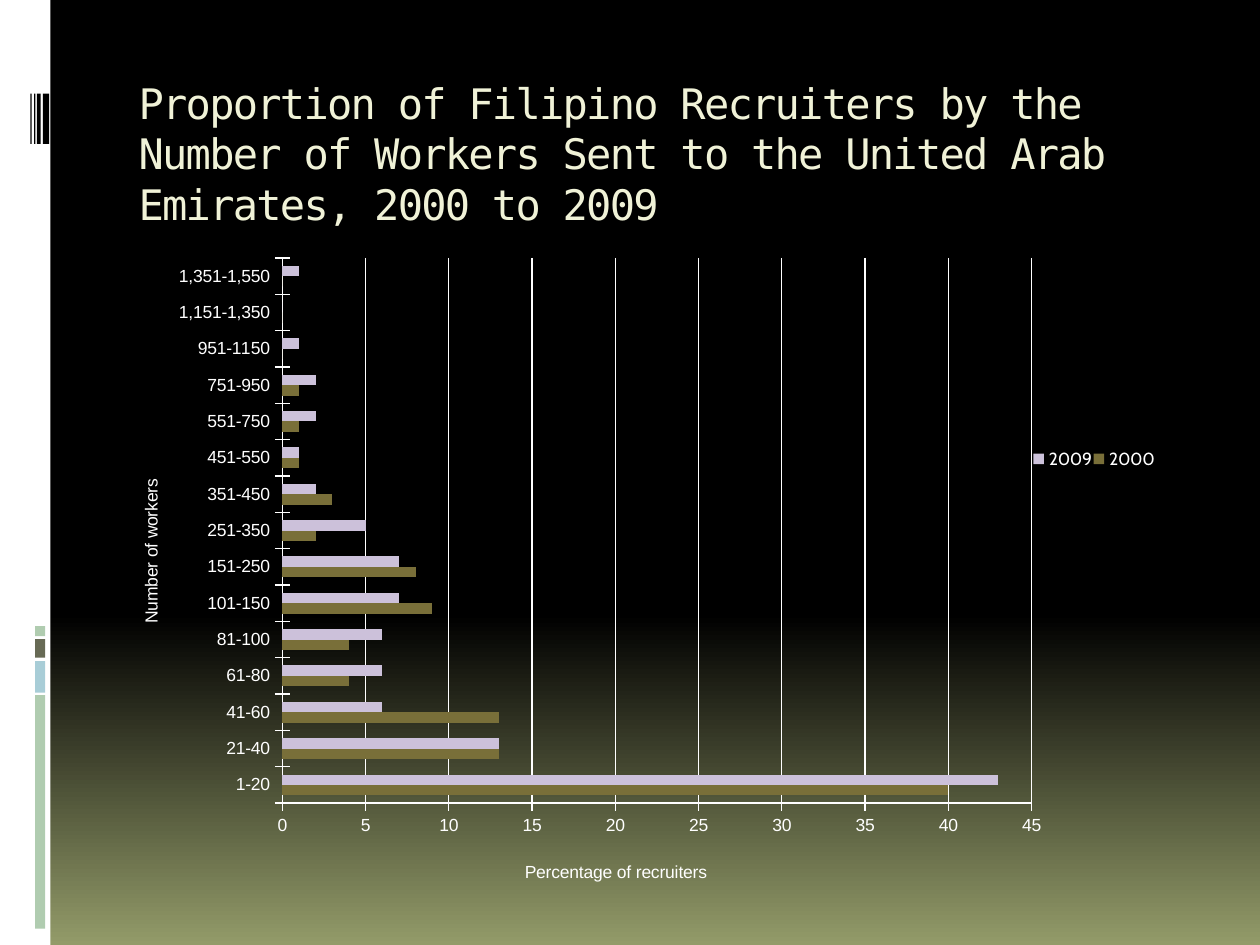
"""Build a slide with a bar chart of Filipino recruiters by number of workers sent."""
from copy import deepcopy

from lxml.etree import SubElement
from pptx import Presentation
from pptx.chart.data import CategoryChartData
from pptx.dml.color import RGBColor
from pptx.enum.chart import XL_CHART_TYPE, XL_LEGEND_POSITION, XL_TICK_MARK
from pptx.enum.shapes import MSO_SHAPE
from pptx.enum.text import MSO_ANCHOR, MSO_AUTO_SIZE, PP_ALIGN
from pptx.oxml.ns import qn
from pptx.util import Pt


def color(target, value):
    target.rgb = RGBColor.from_string(value)


def set_layout(element, position, **settings):
    for old_layout in element.findall(qn("c:layout")):
        element.remove(old_layout)
    layout = element.makeelement(qn("c:layout"))
    manual = SubElement(layout, qn("c:manualLayout"))
    for name, value in settings.items():
        SubElement(manual, qn(f"c:{name}")).set("val", str(value))
    element.insert(position, layout)


presentation = Presentation()
presentation.slide_width, presentation.slide_height = Pt(720), Pt(540)
slide = presentation.slides.add_slide(presentation.slide_layouts[5])

background = slide.background.fill
background.gradient()
background.gradient_angle = 270
first_stop, last_stop = background.gradient_stops
color(first_stop.color, "000000")
color(last_stop.color, "939B69")
first_stop.position, last_stop.position = 0, 1
stop_list = slide.element.find(".//" + qn("a:gsLst"))
middle_stop = deepcopy(stop_list[0])
middle_stop.set("pos", "65000")
stop_list.insert(1, middle_stop)

side_bars = [
    (0, 0, 28.8, 540, "FFFFFF"),
    (20, 397.3, 5.8, 133.4, "B0CCB0"),
    (20, 377.8, 5.8, 18, "A8CDD7"),
    (20, 365.3, 5.8, 10.6, "676A55"),
    (20, 357.8, 5.8, 5.7, "B0CCB0"),
]
barcode = [(24.5, 3.6), (21.1, 2.2), (19.5, 0.8), (17.4, 0.7)]
side_bars += [(left, 53.5, width, 28.8, "000000") for left, width in barcode]
for left, top, width, height, fill in side_bars:
    shape = slide.shapes.add_shape(
        MSO_SHAPE.RECTANGLE, Pt(left), Pt(top), Pt(width), Pt(height))
    shape.shadow.inherit = False
    shape.fill.solid()
    color(shape.fill.fore_color, fill)
    shape.line.fill.background()

title = slide.shapes.title
title.left, title.top, title.width, title.height = Pt(72), Pt(40.5), Pt(612), Pt(72)
title_frame = title.text_frame
title_frame.text = ("Proportion of Filipino Recruiters by the Number of Workers Sent "
                    "to the United Arab Emirates, 2000 to 2009")
title_frame.word_wrap = True
title_frame.auto_size = MSO_AUTO_SIZE.NONE
title_frame.vertical_anchor = MSO_ANCHOR.TOP
paragraph = title_frame.paragraphs[0]
paragraph.alignment = PP_ALIGN.LEFT
title_font = paragraph.runs[0].font
title_font.name, title_font.size = "DejaVu Sans Mono", Pt(24)
color(title_font.color, "F0F2D7")
paragraph.runs[0].font._element.set("spc", "-100")

chart_data = CategoryChartData()
chart_data.categories = [
    "1-20", "21-40", "41-60", "61-80", "81-100", "101-150", "151-250", "251-350",
    "351-450", "451-550", "551-750", "751-950", "951-1150", "1,151-1,350", "1,351-1,550",
]
chart_data.add_series("2000", [40, 13, 13, 4, 4, 9, 8, 2, 3, 1, 1, 1, 0, 0, 0])
chart_data.add_series("2009", [43, 13, 6, 6, 6, 7, 7, 5, 2, 1, 2, 2, 1, 0, 1])
chart = slide.shapes.add_chart(
    XL_CHART_TYPE.BAR_CLUSTERED, Pt(66.2), Pt(131.8), Pt(594.7), Pt(389.5), chart_data).chart
chart.has_title = False
chart.font.name, chart.font.size = "Cabin", Pt(10)
color(chart.font.color, "FFFFFF")

plot = chart.plots[0]
plot.gap_width, plot.overlap = 150, 0
plot.vary_by_categories = False
for series, fill in zip(plot.series, ["796F39", "CCC1DA"]):
    series.format.fill.solid()
    color(series.format.fill.fore_color, fill)

value_axis = chart.value_axis
value_axis.minimum_scale, value_axis.maximum_scale, value_axis.major_unit = 0, 45, 5
value_axis.has_major_gridlines = True
axes = [
    (chart.category_axis, "Number of workers", 0.02, 0.36),
    (value_axis, "Percentage of recruiters", 0.39, 0.92),
]
for axis, caption, x, y in axes:
    axis.major_tick_mark = XL_TICK_MARK.CROSS
    axis.minor_tick_mark = XL_TICK_MARK.NONE
    axis.tick_labels.font.name = "Arial"
    axis.tick_labels.font.size = Pt(10)
    color(axis.tick_labels.font.color, "FFFFFF")
    axis_title = axis.axis_title
    axis_title.text_frame.text = caption
    caption_font = axis_title.text_frame.paragraphs[0].runs[0].font
    caption_font.name, caption_font.size, caption_font.bold = "Arial", Pt(10), False
    color(caption_font.color, "FFFFFF")
    set_layout(axis_title._element, 1, xMode="edge", yMode="edge", x=x, y=y)
for line in (chart.category_axis.format.line, value_axis.format.line,
             value_axis.major_gridlines.format.line):
    line.width = Pt(0.75)
    color(line.color, "FFFFFF")

chart.has_legend = True
chart.legend.position = XL_LEGEND_POSITION.RIGHT
chart.legend.include_in_layout = False
set_layout(chart.legend._element, 1, xMode="edge", yMode="edge", x=0.88, y=0.28, w=0.12, h=0.11)
plot_area = chart.element.find(".//" + qn("c:plotArea"))
set_layout(plot_area, 0, layoutTarget="inner", xMode="edge", yMode="edge",
           x=0.16, y=0.04, w=0.72, h=0.8)

presentation.save("out.pptx")
